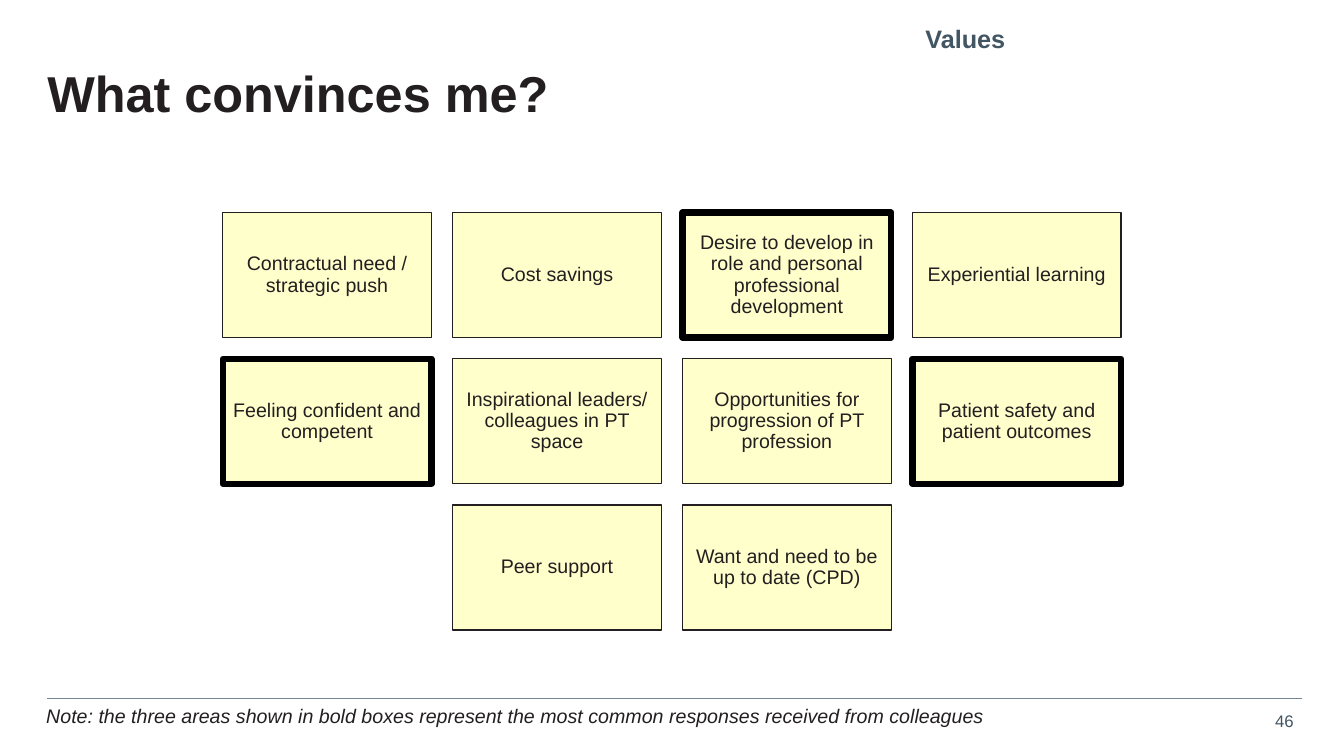
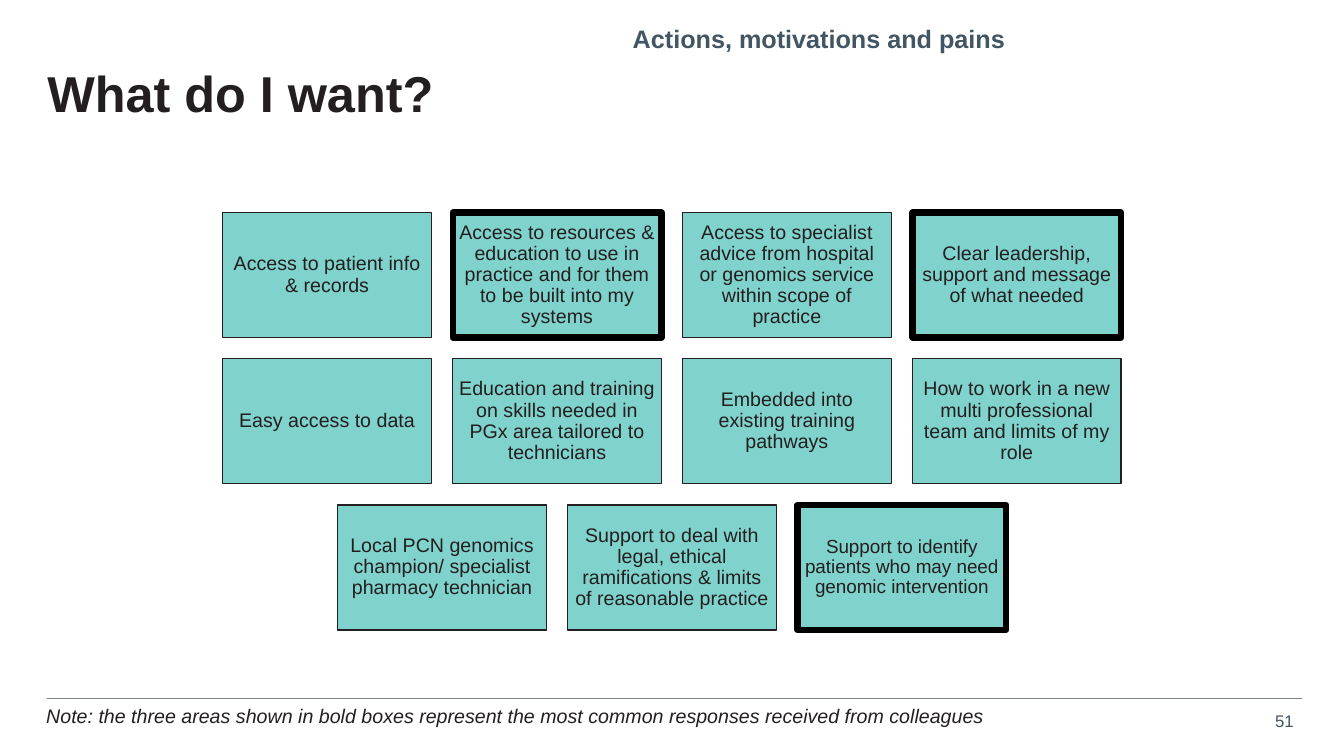
from dataclasses import dataclass

from pptx import Presentation
from pptx.dml.color import RGBColor
from pptx.enum.shapes import MSO_CONNECTOR, MSO_SHAPE
from pptx.enum.text import MSO_ANCHOR, PP_ALIGN
from pptx.oxml.ns import qn
from pptx.util import Inches, Pt


class Theme:
    font = "Arial"
    ink = RGBColor(0x23, 0x1F, 0x20)
    slate = RGBColor(0x42, 0x55, 0x63)
    rule = RGBColor(0x76, 0x86, 0x92)
    black = RGBColor(0, 0, 0)
    cream = RGBColor(0xFF, 0xFF, 0xCC)
    teal = RGBColor(0x80, 0xD2, 0xCC)
    title, topic, body, tight, page = 36, 18, 14, 13.5, 12
    thin, thick, hair = 1, 4.5, 0.5


@dataclass
class Card:
    text: str
    bold: bool = False
    size: float = Theme.body


NOTE = ("Note: the three areas shown in bold boxes represent "
        "the most common responses received from colleagues")

SLIDES = [
    {
        "title": "What convinces me?",
        "topic": "Values",
        "page": "46",
        "fill": Theme.cream,
        "rows": [
            [Card("Contractual need / strategic push"),
             Card("Cost savings"),
             Card("Desire to develop in role and personal professional development",
                  bold=True),
             Card("Experiential learning")],
            [Card("Feeling confident and competent", bold=True),
             Card("Inspirational leaders/ colleagues in PT space"),
             Card("Opportunities for progression of PT profession"),
             Card("Patient safety and patient outcomes", bold=True)],
            [Card("Peer support"),
             Card("Want and need to be up to date (CPD)")],
        ],
    },
    {
        "title": "What do I want?",
        "topic": "Actions, motivations and pains",
        "page": "51",
        "fill": Theme.teal,
        "rows": [
            [Card("Access to patient info & records"),
             Card("Access to resources & education to use in practice "
                  "and for them to be built into my systems", bold=True),
             Card("Access to specialist advice from hospital or genomics "
                  "service within scope of practice"),
             Card("Clear leadership, support and message of what needed",
                  bold=True)],
            [Card("Easy access to data"),
             Card("Education and training on skills needed in PGx area "
                  "tailored to technicians"),
             Card("Embedded into existing training pathways"),
             Card("How to work in a new multi professional team "
                  "and limits of my role")],
            [Card("Local PCN genomics champion/ specialist pharmacy technician"),
             Card("Support to deal with legal, ethical ramifications "
                  "& limits of reasonable practice"),
             Card("Support to identify patients who may need genomic intervention",
                  bold=True, size=Theme.tight)],
        ],
    },
]

WIDTH, HEIGHT = Inches(13.33), Inches(7.5)
CARD_W, CARD_H = Inches(2.07), Inches(1.24)
GAP, GRID_TOP = Inches(0.21), Inches(2.11)


def write(shape, text, size, color=Theme.ink, align=PP_ALIGN.LEFT,
          pad=None, spacing=None, bold=False, italic=False):
    """Put one styled paragraph in a shape; pad sets all four insets."""
    frame = shape.text_frame
    frame.text = text
    frame.word_wrap = True
    if pad is not None:
        frame.margin_left = frame.margin_right = Inches(pad)
        frame.margin_top = frame.margin_bottom = Inches(pad)
    para = frame.paragraphs[0]
    para.alignment = align
    if spacing:
        para.line_spacing = spacing
    font = para.runs[0].font
    font.name, font.size = Theme.font, Pt(size)
    font.bold, font.italic = bold, italic
    font.color.rgb = color
    return frame


def add_box(slide, left, top, width, height):
    return slide.shapes.add_textbox(
        Inches(left), Inches(top), Inches(width), Inches(height))


def add_frame(slide, title, topic, page):
    """Draw the heading, topic, footer rule, note and page number."""
    number = write(add_box(slide, 12.52, 7, 0.41, 0.3), page, Theme.page,
                   Theme.slate, PP_ALIGN.RIGHT)
    number.word_wrap = False
    rule = slide.shapes.add_connector(
        MSO_CONNECTOR.STRAIGHT, Inches(0.47), Inches(6.93),
        Inches(12.91), Inches(6.93))
    rule.line.color.rgb = Theme.rule
    rule.line.width = Pt(Theme.hair)
    props = rule._element.spPr
    props.append(props.makeelement(qn("a:effectLst"), {}))
    write(add_box(slide, 0.47, 0.68, 12.47, 0.68), title, Theme.title,
          pad=0, spacing=0.9, bold=True)
    write(add_box(slide, 4.78, 0.23, 5.19, 0.63), topic, Theme.topic,
          Theme.slate, PP_ALIGN.RIGHT, pad=0, spacing=Pt(22), bold=True)
    write(add_box(slide, 0.36, 6.93, 12.47, 0.34), NOTE, Theme.body, italic=True)


def add_card(slide, card, left, top, fill):
    shape = slide.shapes.add_shape(MSO_SHAPE.RECTANGLE, left, top, CARD_W, CARD_H)
    shape.shadow.inherit = False
    shape.fill.solid()
    shape.fill.fore_color.rgb = fill
    shape.line.color.rgb = Theme.black if card.bold else Theme.ink
    shape.line.width = Pt(Theme.thick if card.bold else Theme.thin)
    frame = write(shape, card.text, card.size, align=PP_ALIGN.CENTER,
                  pad=0.06, spacing=0.9)
    frame.vertical_anchor = MSO_ANCHOR.MIDDLE


def add_grid(slide, rows, fill):
    """Stack the rows of cards, each row centred on the slide."""
    for r, row in enumerate(rows):
        span = len(row) * (CARD_W + GAP) - GAP
        start = (WIDTH - span) // 2
        top = GRID_TOP + r * (CARD_H + GAP)
        for c, card in enumerate(row):
            add_card(slide, card, start + c * (CARD_W + GAP), top, fill)


def main():
    deck = Presentation()
    deck.slide_width, deck.slide_height = WIDTH, HEIGHT
    for data in SLIDES:
        slide = deck.slides.add_slide(deck.slide_layouts[6])
        add_frame(slide, data["title"], data["topic"], data["page"])
        add_grid(slide, data["rows"], data["fill"])
    deck.save("out.pptx")


if __name__ == "__main__":
    main()
